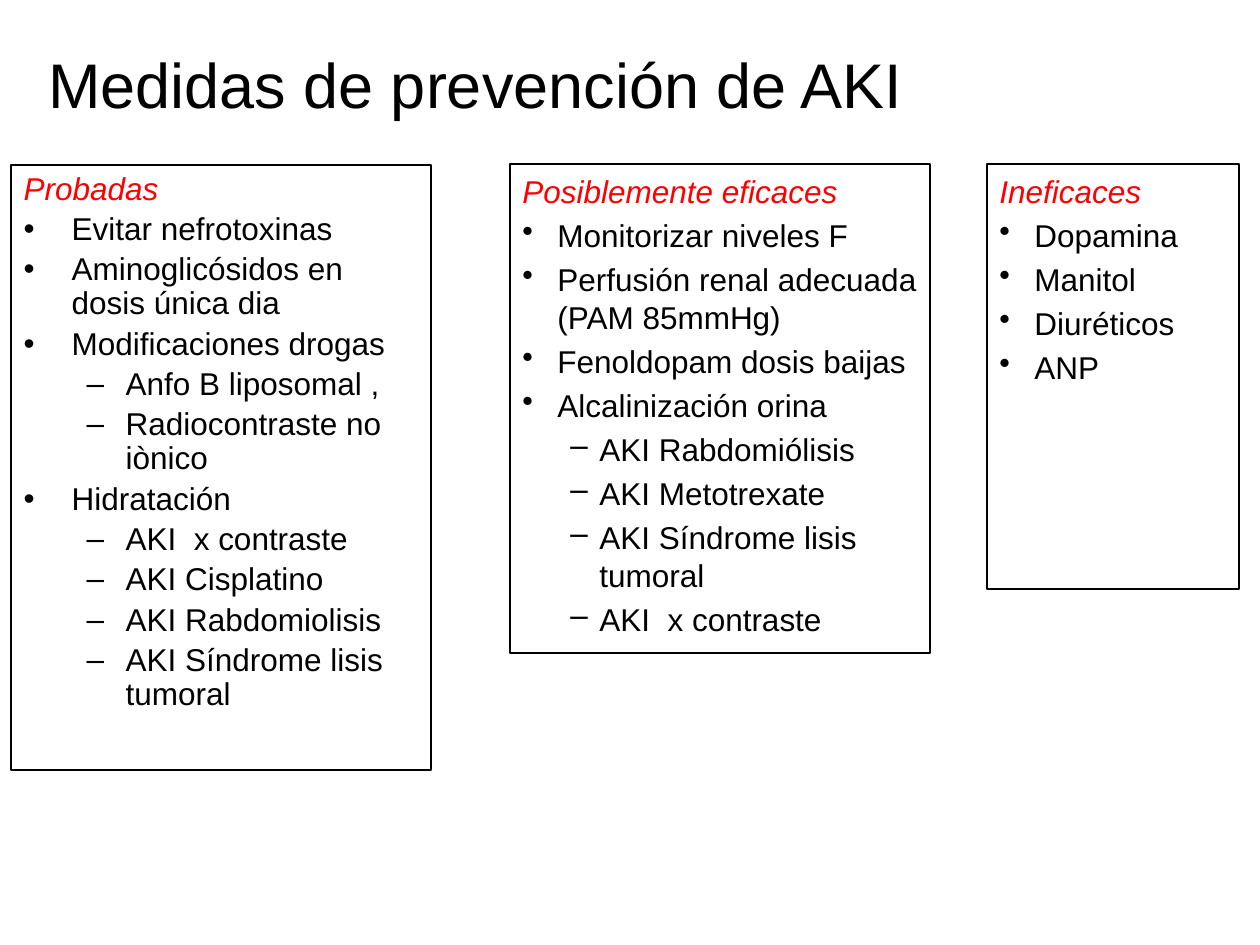
from lxml import etree
from pptx import Presentation
from pptx import util as u
from pptx.dml.color import RGBColor
from pptx.enum import shapes, text
from pptx.oxml.ns import qn

BLACK = RGBColor(0, 0, 0)
RED = RGBColor(255, 0, 0)
SCALE = 914400 / 126  # EMU per px


def px(n):
    return u.Emu(round(n * SCALE))


def put(obj, vals):
    for key, val in vals.items():
        setattr(obj, key, val)


class Deck:
    face = "Arial"
    size = u.Pt(18)
    marks = ("•", "–")

    def __init__(self, wide, high):
        self.prs = Presentation()
        put(self.prs, {"slide_width": px(wide), "slide_height": px(high)})
        self.slide = self.prs.slides.add_slide(self.prs.slide_layouts[1])

    def place(self, shape, box):
        put(shape, dict(zip(("left", "top", "width", "height"), map(px, box))))

    def label(self, para, words, color=BLACK, **more):
        run = para.add_run()
        run.text = words
        put(run.font, {"name": self.face, "size": self.size, **more})
        run.font.color.rgb = color

    def title(self, words, box, inset):
        shape = self.slide.shapes.title
        self.place(shape, box)
        put(shape.text_frame, {
            "margin_left": px(inset), "word_wrap": True,
            "auto_size": text.MSO_AUTO_SIZE.NONE,
            "vertical_anchor": text.MSO_ANCHOR.MIDDLE})
        para = shape.text_frame.paragraphs[0]
        para.alignment = text.PP_ALIGN.LEFT
        self.label(para, words, size=u.Pt(36))

    def body(self):
        return self.slide.placeholders[1]

    def rect(self):
        shape = self.slide.shapes.add_shape(
            shapes.MSO_SHAPE.RECTANGLE, 0, 0, px(1), px(1))
        shape.shadow.inherit = False
        return shape

    def indent(self, para, level, dents):
        left, hang = dents[level]
        para.level = level
        props = para._p.get_or_add_pPr()
        props.set("marL", str(px(left)))
        props.set("indent", str(-px(hang)))
        return props

    def panel(self, shape, box, head, items, dents, lead=1.0):
        """Framed list: a red heading, then (level, words) items."""
        self.place(shape, box)
        shape.fill.background()
        shape.line.color.rgb = BLACK
        shape.line.width = u.Pt(0.75)
        frame = shape.text_frame
        put(frame, {"word_wrap": True, "margin_top": px(8),
                    "auto_size": text.MSO_AUTO_SIZE.NONE,
                    "vertical_anchor": text.MSO_ANCHOR.TOP})
        for i, (level, words) in enumerate([(0, head), *items]):
            para = frame.add_paragraph() if i else frame.paragraphs[0]
            props = self.indent(para, level, dents)
            if i:
                mark = etree.SubElement(props, qn("a:buChar"))
                mark.set("char", self.marks[level])
            else:
                etree.SubElement(props, qn("a:buNone"))
            put(para, {"alignment": text.PP_ALIGN.LEFT, "line_spacing": lead,
                       "space_before": u.Pt(3.6 if i else 0),
                       "space_after": u.Pt(0)})
            self.label(para, words, BLACK if i else RED, italic=not i)


def main():
    deck = Deck(1260, 945)
    loose = ((48, 48), (102, 39))
    tight = ((35, 35), (77, 29))

    # Proven measures
    deck.panel(deck.body(), (11, 165, 420, 605), "Probadas", [
        (0, "Evitar nefrotoxinas"),
        (0, "Aminoglicósidos en dosis única dia"),
        (0, "Modificaciones drogas"),
        (1, "Anfo B liposomal ,"),
        (1, "Radiocontraste no iònico"),
        (0, "Hidratación"),
        (1, "AKI  x contraste"),
        (1, "AKI Cisplatino"),
        (1, "AKI Rabdomiolisis"),
        (1, "AKI Síndrome lisis tumoral"),
    ], loose, 0.9)

    # Possibly effective measures
    deck.panel(deck.rect(), (510, 164, 420, 489), "Posiblemente eficaces", [
        (0, "Monitorizar niveles F"),
        (0, "Perfusión renal adecuada (PAM 85mmHg)"),
        (0, "Fenoldopam dosis baijas"),
        (0, "Alcalinización orina"),
        (1, "AKI Rabdomiólisis"),
        (1, "AKI Metotrexate"),
        (1, "AKI Síndrome lisis tumoral"),
        (1, "AKI  x contraste"),
    ], tight)

    # Ineffective measures
    drugs = ("Dopamina", "Manitol", "Diuréticos", "ANP")
    deck.panel(deck.rect(), (987, 164, 252, 425), "Ineficaces",
               [(0, drug) for drug in drugs], tight)

    # Title
    deck.title("Medidas de prevención de AKI", (0, 37, 1057, 92), 48)
    deck.prs.save("out.pptx")


if __name__ == "__main__":
    main()
